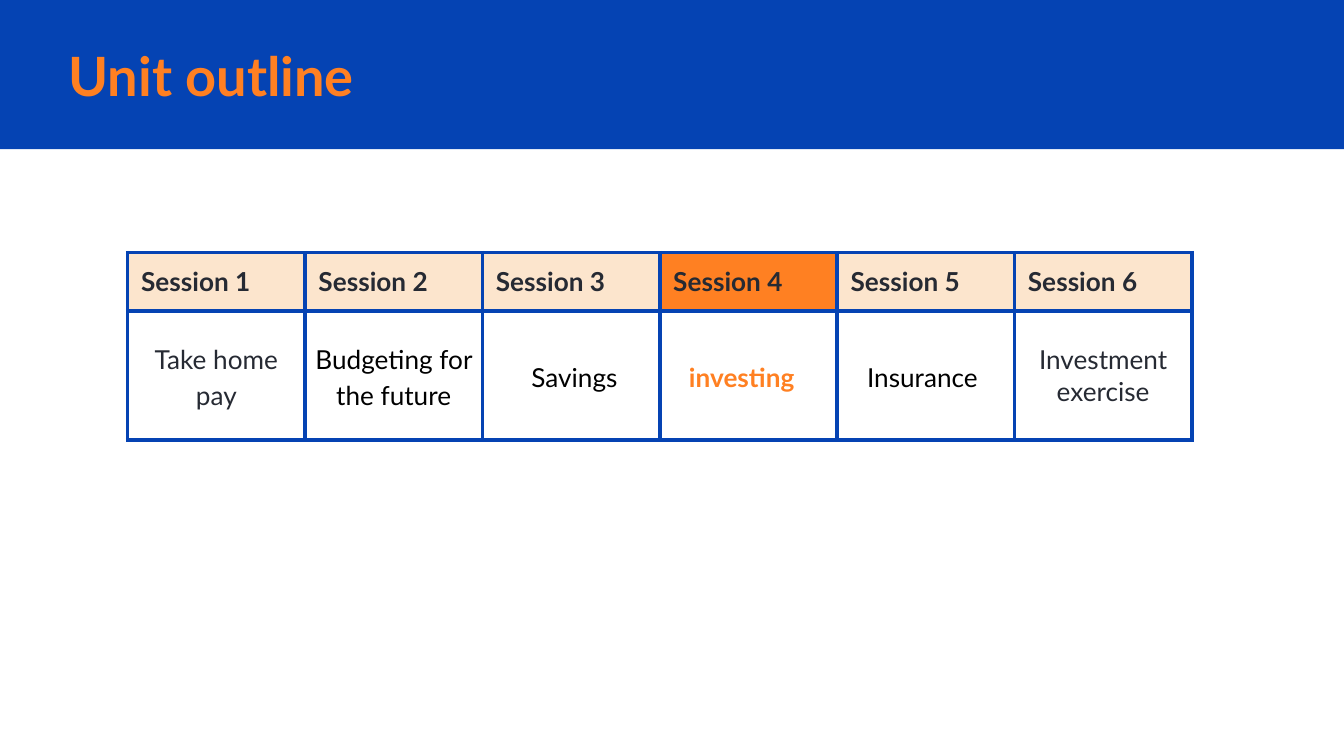
from lxml import etree
from pptx import Presentation
from pptx.dml.color import RGBColor
from pptx.enum.shapes import MSO_SHAPE
from pptx.enum.text import MSO_ANCHOR, PP_ALIGN
from pptx.oxml.ns import qn
from pptx.util import Inches, Pt

RECT = MSO_SHAPE.RECTANGLE
TOP, MIDDLE = MSO_ANCHOR.TOP, MSO_ANCHOR.MIDDLE
LEFT, CENTER = PP_ALIGN.LEFT, PP_ALIGN.CENTER
SIDES = ("left", "right", "top", "bottom")
COLORS = {
    "blue": "0543B3",
    "orange": "FF8022",
    "peach": "FCE5CD",
    "white": "FFFFFF",
    "ink": "262A33",
    "black": "000000",
}
ACTIVE = 3
TOPICS = [
    ("Take home pay", "ink", {}),
    ("Budgeting for the future", "black", {}),
    ("Savings", "black", {"left": 0.12}),
    ("investing", "orange", {"right": 0.17}),
    ("Insurance", "black", {"right": 0.12}),
    ("Investment exercise", "ink", dict.fromkeys(SIDES, 0.1)),
]


def rgb(name):
    return RGBColor.from_string(COLORS[name])


def paint(shape, name):
    shape.fill.solid()
    shape.fill.fore_color.rgb = rgb(name)


def write(frame, text, size, color, bold, align, space=None):
    para = frame.paragraphs[0]
    para.alignment = align
    if space:
        para.line_spacing = space
    run = para.add_run()
    run.text = text
    style = {"name": "Lato", "size": Pt(size), "bold": bold}
    for key, value in style.items():
        setattr(run.font, key, value)
    run.font.color.rgb = rgb(color)


def inset(box, gap, extra=None):
    gaps = dict.fromkeys(SIDES, gap) | (extra or {})
    for side, value in gaps.items():
        setattr(box, f"margin_{side}", Inches(value))


def border(cell):
    props = cell._tc.get_or_add_tcPr()
    for spot, tag in enumerate(("a:lnL", "a:lnR", "a:lnT", "a:lnB")):
        line = etree.Element(qn(tag), w=str(Pt(2.25)))
        fill = etree.SubElement(line, qn("a:solidFill"))
        etree.SubElement(fill, qn("a:srgbClr"), val=COLORS["blue"])
        props.insert(spot, line)


def add_head(slide, text):
    title = slide.shapes.title
    band = slide.shapes.add_shape(RECT, 0, 0, Inches(10), Inches(1.11))
    band.shadow.inherit = False
    paint(band, "blue")
    band.line.fill.background()
    title.element.addprevious(band.element)
    place = {"left": 0.41, "top": 0.28, "width": 8.46, "height": 0.56}
    for key, value in place.items():
        setattr(title, key, Inches(value))
    frame = title.text_frame
    inset(frame, 0.1)
    frame.vertical_anchor = MIDDLE
    write(frame, text, 29, "orange", True, LEFT)


def add_plan(slide):
    count = len(TOPICS)
    table = slide.shapes.add_table(
        2, count, Inches(0.95), Inches(1.88), Inches(1.32 * count), Inches(1.38)
    ).table
    for row, height in zip(table.rows, (0.42, 0.96)):
        row.height = Inches(height)
    for col, (topic, color, extra) in enumerate(TOPICS):
        head, body = table.cell(0, col), table.cell(1, col)
        active = col == ACTIVE
        inset(head, 0.1)
        inset(body, 0.07, extra)
        head.vertical_anchor, body.vertical_anchor = TOP, MIDDLE
        paint(head, "orange" if active else "peach")
        paint(body, "white")
        write(head.text_frame, f"Session {col + 1}", 14, "ink", True, LEFT)
        space = 1.15 if col < count - 1 else None
        write(body.text_frame, topic, 14, color, active, CENTER, space)
        border(head)
        border(body)


def main():
    deck = Presentation()
    deck.slide_width = Inches(10)
    deck.slide_height = deck.slide_width * 9 // 16
    slide = deck.slides.add_slide(deck.slide_layouts[5])
    add_head(slide, "Unit outline")
    add_plan(slide)
    deck.save("out.pptx")


if __name__ == "__main__":
    main()
